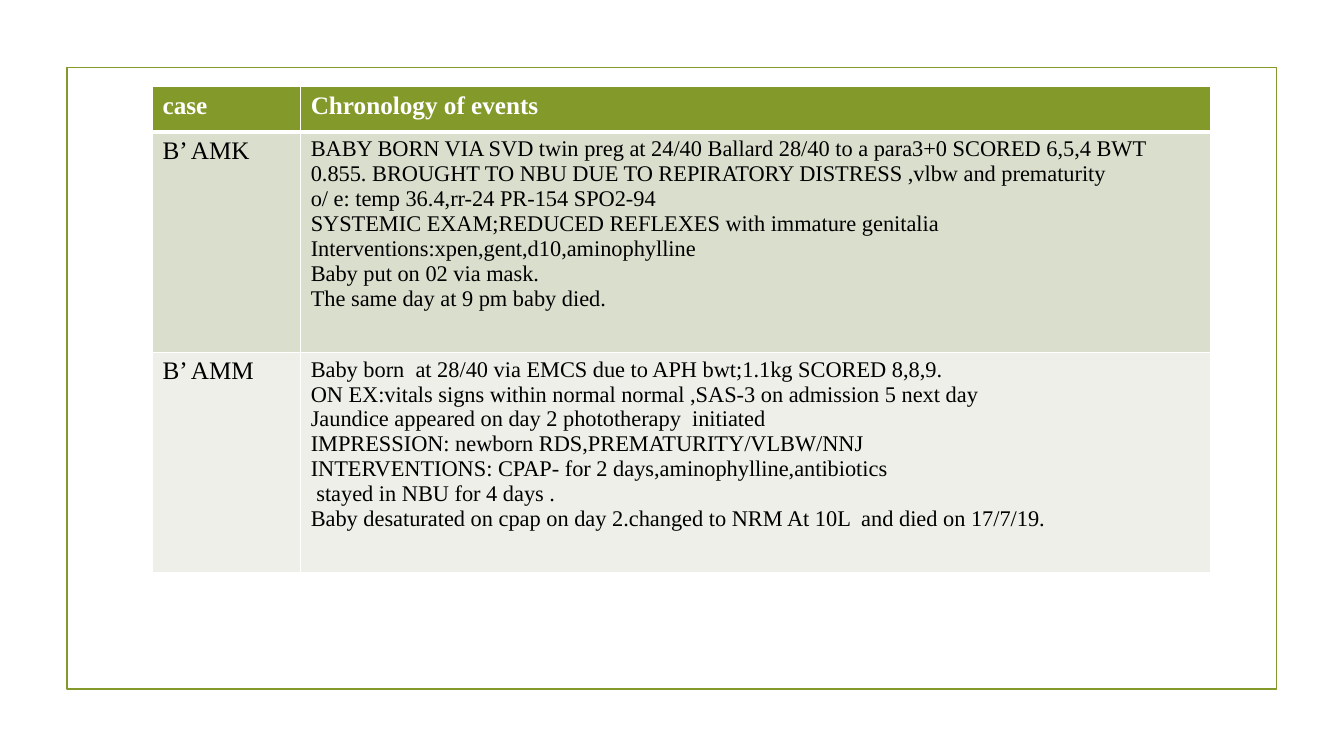
from lxml.etree import SubElement
from pptx import Presentation
from pptx.dml.color import RGBColor
from pptx.enum.shapes import MSO_SHAPE as Shape
from pptx.oxml.ns import qn
from pptx.util import Pt

FONT = "Times New Roman"
GREEN = RGBColor(0x83, 0x99, 0x2A)
SAGE = RGBColor(0xD9, 0xDE, 0xCD)
PALE = RGBColor(0xED, 0xEF, 0xE8)
WHITE = RGBColor(0xFF, 0xFF, 0xFF)
BLACK = RGBColor(0, 0, 0)

HEADINGS = ("case", "Chronology of events")
CASES = [
    ("B’ AMK", [
        "BABY BORN VIA SVD twin preg at 24/40 Ballard 28/40 to a para3+0 SCORED 6,5,4 BWT "
        "0.855. BROUGHT TO NBU DUE TO REPIRATORY DISTRESS ,vlbw and prematurity",
        "o/ e: temp 36.4,rr-24 PR-154 SPO2-94",
        "SYSTEMIC EXAM;REDUCED REFLEXES with immature genitalia",
        "Interventions:xpen,gent,d10,aminophylline",
        "Baby put on 02 via mask.",
        "The same day at 9 pm baby died.",
    ]),
    ("B’ AMM", [
        "Baby born  at 28/40 via EMCS due to APH bwt;1.1kg SCORED 8,8,9.",
        "ON EX:vitals signs within normal normal ,SAS-3 on admission 5 next day",
        "Jaundice appeared on day 2 phototherapy  initiated",
        "IMPRESSION: newborn RDS,PREMATURITY/VLBW/NNJ",
        "INTERVENTIONS: CPAP- for 2 days,aminophylline,antibiotics",
        " stayed in NBU for 4 days .",
        "Baby desaturated on cpap on day 2.changed to NRM At 10L  and died on 17/7/19.",
    ]),
]


def add_frame(slide, left, top, width, height):
    frame = slide.shapes.add_shape(Shape.RECTANGLE, Pt(left), Pt(top), Pt(width), Pt(height))
    frame.shadow.inherit = False
    frame.fill.background()
    frame.line.color.rgb = GREEN
    frame.line.width = Pt(1.25)


def set_borders(cell, bottom):
    properties = cell._tc.get_or_add_tcPr()
    for side, width in (("L", 1), ("R", 1), ("T", 1), ("B", bottom)):
        line = SubElement(properties, qn(f"a:ln{side}"), w=str(Pt(width)))
        fill = SubElement(line, qn("a:solidFill"))
        SubElement(fill, qn("a:srgbClr"), val=str(WHITE))


def fill_cell(cell, lines, size, fill, color=BLACK, bold=False, bottom=1):
    set_borders(cell, bottom)
    cell.fill.solid()
    cell.fill.fore_color.rgb = fill
    cell.text_frame.text = "\n".join(lines)
    for para in cell.text_frame.paragraphs:
        for span in para.runs:
            span.font.name = FONT
            span.font.size = Pt(size)
            span.font.bold = bold
            span.font.color.rgb = color


def add_case_table(slide, left, top, width, height):
    label_width, header_height = 105.8, 32.2
    table = slide.shapes.add_table(
        len(CASES) + 1, len(HEADINGS), Pt(left), Pt(top), Pt(width), Pt(height)).table
    table.columns[0].width = Pt(label_width)
    table.columns[1].width = Pt(width - label_width)

    # Header row
    table.rows[0].height = Pt(header_height)
    for column, heading in enumerate(HEADINGS):
        fill_cell(table.cell(0, column), [heading], 18, GREEN, WHITE, bold=True, bottom=3)

    # One row per case, in alternating shades
    for row, (name, events) in enumerate(CASES, start=1):
        table.rows[row].height = Pt((height - header_height) / len(CASES))
        shade = SAGE if row % 2 else PALE
        fill_cell(table.cell(row, 0), [name], 18, shade)
        fill_cell(table.cell(row, 1), events, 16, shade)


def main():
    deck = Presentation()
    deck.slide_width, deck.slide_height = Pt(960), Pt(540)
    slide = deck.slides.add_slide(deck.slide_layouts[6])
    add_frame(slide, 47.8, 48.2, 864, 444)
    add_case_table(slide, 109, 62, 755.8, 347)
    deck.save("out.pptx")


if __name__ == "__main__":
    main()
